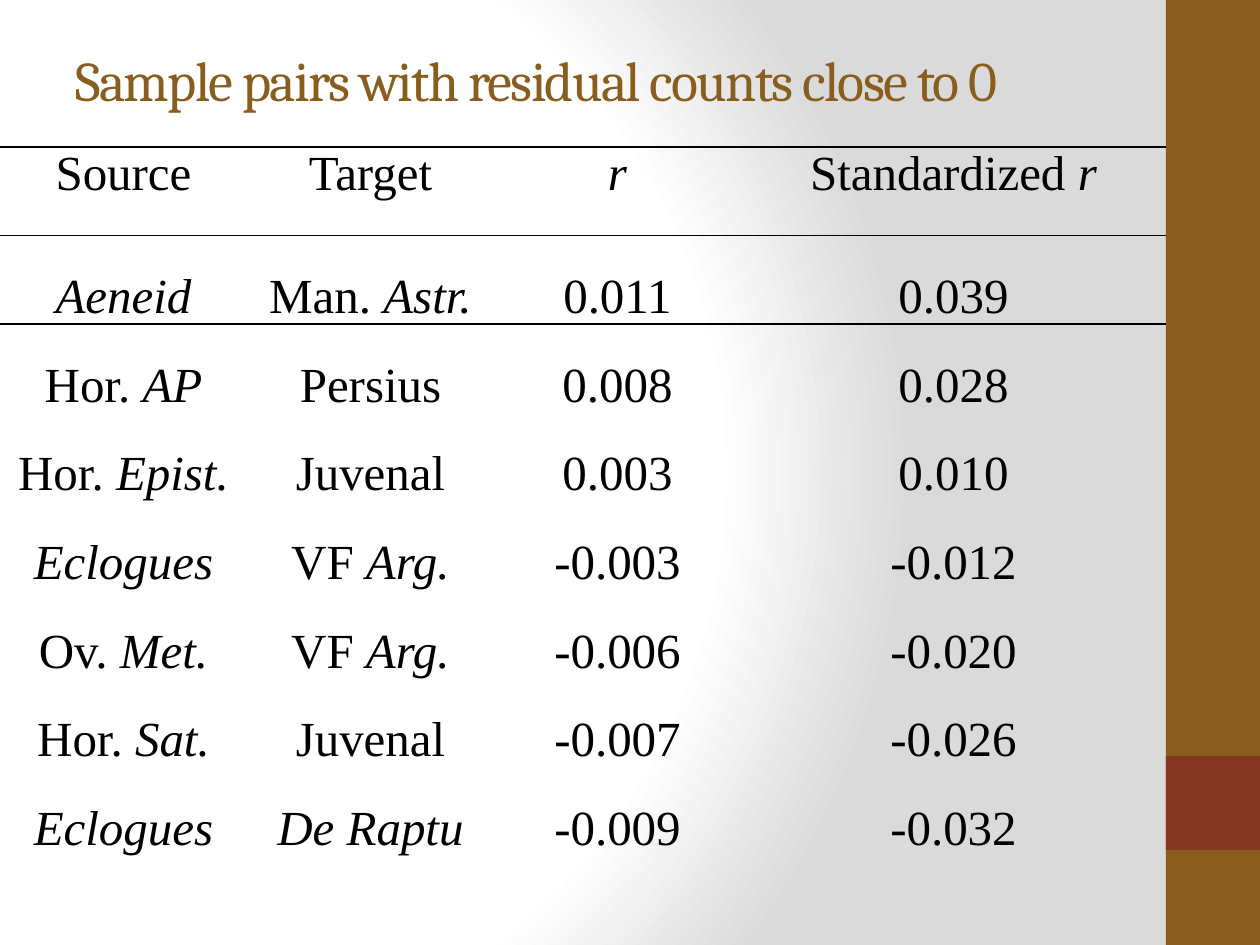
"""Builds a slide with a table of text pairs whose residual counts are close to zero."""
from lxml import etree
from pptx import Presentation
from pptx import util as u
from pptx.dml.color import RGBColor
from pptx.enum import shapes, text
from pptx.oxml import parse_xml
from pptx.oxml.ns import nsdecls, qn

TITLE = "Sample pairs with residual counts close to 0"
ROWS = [
    ("Source", "Target", "*r*", "Standardized *r*"),
    ("*Aeneid*", "Man. *Astr.*", "0.011", "0.039"),
    ("Hor. *AP*", "Persius", "0.008", "0.028"),
    ("Hor. *Epist.*", "Juvenal", "0.003", "0.010"),
    ("*Eclogues*", "VF *Arg.*", "-0.003", "-0.012"),
    ("Ov. *Met.*", "VF *Arg.*", "-0.006", "-0.020"),
    ("Hor. *Sat.*", "Juvenal", "-0.007", "-0.026"),
    ("*Eclogues*", "*De Raptu*", "-0.009", "-0.032"),
]
COLUMNS = [247, 247, 247, 425]
TABLE_TOP, TABLE_HEIGHT = 147, 709
BARS = [((1166, 0, 94, 945), "895D1D"), ((1166, 756, 94, 94), "873624")]
TITLE_BOX = (63, 0, 1050, 158)
STOPS = [(0, "FFFFFF"), (75, "FFFFFF"), (100, "DADADA")]
CENTRE = {"l": 20, "t": 50, "r": 100, "b": 50}
TITLE_FONT = {"name": "Cambria", "size": u.Pt(32), "bold": False}
CELL_FONT = {"name": "Times New Roman", "size": u.Pt(28), "bold": False}
CELL_FORMAT = {"margin_left": u.Inches(0.07), "margin_right": u.Inches(0.07),
               "margin_top": 0, "margin_bottom": 0}
PLAIN_TABLE = "{2D5ABB26-0587-4C30-8999-92F81FD0307C}"


def px(length):
    return u.Emu(round(length * 914400 / 126))


def colour(value):
    return RGBColor.from_string(value)


def assign(target, values):
    for name, value in values.items():
        setattr(target, name, value)


def write(para, marked, font, ink):
    for index, part in enumerate(marked.split("*")):
        if part:
            span = para.add_run()
            span.text = part
            assign(span.font, font)
            span.font.italic = index % 2 == 1
            span.font.color.rgb = colour(ink)


def paint_background(page):
    page.background.fill.gradient()
    gradient = page.element.find(".//" + qn("a:gradFill"))
    for child in list(gradient):
        gradient.remove(child)
    stops = etree.SubElement(gradient, qn("a:gsLst"))
    for position, value in STOPS:
        stop = etree.SubElement(stops, qn("a:gs"), pos=str(position * 1000))
        etree.SubElement(stop, qn("a:srgbClr"), val=value)
    circle = etree.SubElement(gradient, qn("a:path"), path="circle")
    etree.SubElement(circle, qn("a:fillToRect"),
                     {side: str(share * 1000) for side, share in CENTRE.items()})


def add_bars(page):
    for place, value in BARS:
        bar = page.shapes.add_shape(shapes.MSO_SHAPE.RECTANGLE, *map(px, place))
        bar.shadow.inherit = False
        bar.fill.solid()
        bar.fill.fore_color.rgb = colour(value)
        bar.line.fill.background()


def add_title(page):
    title = page.shapes.title
    assign(title, dict(zip(("left", "top", "width", "height"), map(px, TITLE_BOX))))
    assign(title.text_frame, {"vertical_anchor": text.MSO_ANCHOR.MIDDLE, "word_wrap": True})
    para = title.text_frame.paragraphs[0]
    para.alignment = text.PP_ALIGN.LEFT
    write(para, TITLE, TITLE_FONT, "895D1D")
    para.runs[0].font._element.set("spc", "-100")


def add_border(cell, side):
    cell._tc.get_or_add_tcPr().append(parse_xml(
        f'<a:{side} {nsdecls("a")} w="12700"><a:solidFill><a:srgbClr val="000000"/>'
        f'</a:solidFill></a:{side}>'))


def add_pairs(page):
    frame = page.shapes.add_table(len(ROWS), len(COLUMNS), 0, px(TABLE_TOP),
                                  px(sum(COLUMNS)), px(TABLE_HEIGHT))
    table = frame.table
    assign(table, {"first_row": False, "horz_banding": False})
    table._tbl.tblPr.find(qn("a:tableStyleId")).text = PLAIN_TABLE
    for column, width in zip(table.columns, COLUMNS):
        column.width = px(width)
    borders = {0: ("lnT", "lnB"), 1: ("lnT",)}
    for r, row in enumerate(ROWS):
        for c, marked in enumerate(row):
            cell = table.cell(r, c)
            assign(cell, CELL_FORMAT)
            cell.vertical_anchor = text.MSO_ANCHOR.BOTTOM if r else text.MSO_ANCHOR.TOP
            for side in borders.get(r, ()):
                add_border(cell, side)
            cell.fill.background()
            para = cell.text_frame.paragraphs[0]
            para.alignment = text.PP_ALIGN.CENTER
            write(para, marked, CELL_FONT, "000000")


def main():
    deck = Presentation()
    assign(deck, {"slide_width": px(1260), "slide_height": px(945)})
    page = deck.slides.add_slide(deck.slide_layouts[5])
    paint_background(page)
    add_bars(page)
    add_title(page)
    add_pairs(page)
    deck.save("out.pptx")


if __name__ == "__main__":
    main()
